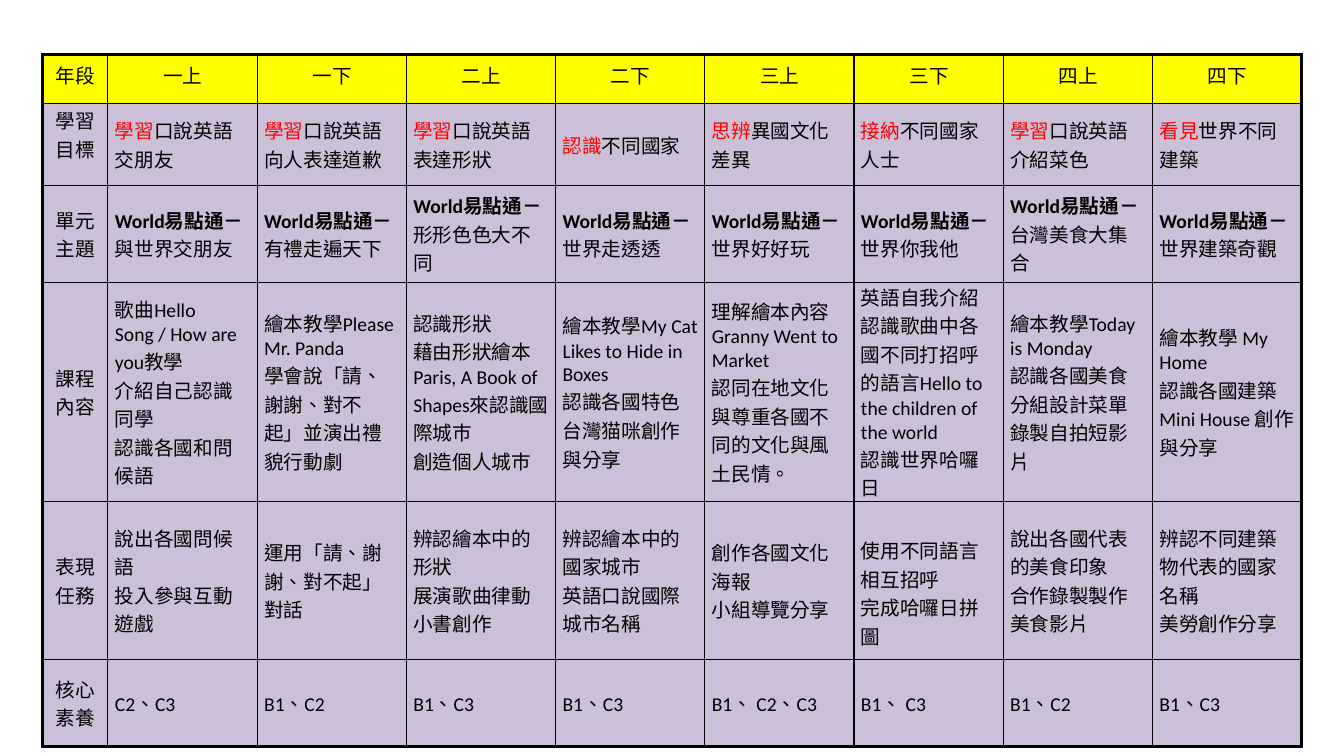
"""Build a one-slide curriculum table for an English programme."""
from dataclasses import dataclass

from lxml import etree
from pptx import Presentation
from pptx.dml.color import RGBColor
from pptx.enum.lang import MSO_LANGUAGE_ID
from pptx.enum.text import MSO_ANCHOR, PP_ALIGN
from pptx.oxml.ns import qn
from pptx.slide import Slide
from pptx.table import _Cell
from pptx.util import Inches, Pt

MIDDLE = MSO_ANCHOR.MIDDLE
CENTER = PP_ALIGN.CENTER
LEFT = PP_ALIGN.LEFT
CHINESE = MSO_LANGUAGE_ID.TRADITIONAL_CHINESE
COLORS = {"header": "FFFF00", "body": "CCC0D9", "text": "000000", "verb": "FF0000"}
TEXT_SIZE = Pt(14)
LEFT_MARGIN = Inches(0.07)
RIGHT_MARGIN = Inches(0.06)
OUTER_LINE = Pt(2.25)
INNER_LINE = Pt(1)
LABEL_WIDTH = 0.65
TERM_WIDTH = 1.48
VERB_LENGTH = 2
SERIES = "World易點通－"


@dataclass(frozen=True)
class Band:
    """One table row: its height, row label and the text for each term."""

    height: float
    label: str
    terms: tuple[str, ...]
    fill: str = "body"
    font: str = "Calibri"
    red_verb: bool = False
    bold_title: bool = False


BANDS = (
    Band(0.49, "年段", ("一上", "一下", "二上", "二下", "三上", "三下", "四上", "四下"), fill="header"),
    Band(0.81, "學習\n目標", (
        "學習口說英語交朋友",
        "學習口說英語向人表達道歉",
        "學習口說英語表達形狀",
        "認識不同國家",
        "思辨異國文化差異",
        "接納不同國家人士",
        "學習口說英語介紹菜色",
        "看見世界不同建築",
    ), font="Arial", red_verb=True),
    Band(0.96, "單元\n主題", tuple(f"{SERIES}\n{topic}" for topic in (
        "與世界交朋友", "有禮走遍天下", "形形色色大不同", "世界走透透",
        "世界好好玩", "世界你我他", "台灣美食大集合", "世界建築奇觀",
    )), bold_title=True),
    Band(1.94, "課程內容", (
        "歌曲Hello Song / How are you教學\n介紹自己認識同學\n認識各國和問候語",
        "繪本教學Please Mr. Panda\n學會說「請、謝謝、對不起」並演出禮貌行動劇",
        "認識形狀\n藉由形狀繪本Paris, A Book of Shapes來認識國際城巿\n創造個人城巿",
        "繪本教學My Cat Likes to Hide in Boxes\n認識各國特色\n台灣猫咪創作與分享",
        "理解繪本內容Granny Went to Market\n認同在地文化與尊重各國不同的文化與風土民情。",
        "英語自我介紹\n認識歌曲中各國不同打招呼的語言Hello to the children of the world\n認識世界哈囉日",
        "繪本教學Today is Monday\n認識各國美食\n分組設計菜單\n錄製自拍短影片",
        "繪本教學 My Home\n認識各國建築\nMini House 創作與分享",
    )),
    Band(1.57, "表現任務", (
        "說出各國問候語\n投入參與互動遊戲",
        "運用「請、謝謝、對不起」對話",
        "辨認繪本中的形狀\n展演歌曲律動小書創作",
        "辨認繪本中的國家城市\n英語口說國際城市名稱",
        "創作各國文化海報\n小組導覽分享",
        "使用不同語言相互招呼\n完成哈囉日拼圖",
        "說出各國代表的美食印象\n合作錄製製作美食影片",
        "辨認不同建築物代表的國家名稱\n美勞創作分享",
    )),
    Band(0.86, "核心\n素養", (
        "C2、C3", "B1、C2", "B1、C3", "B1、C3", "B1、 C2、C3", "B1、 C3", "B1、C2", "B1、C3",
    )),
)


def color(name: str) -> RGBColor:
    """Return a named colour."""
    return RGBColor.from_string(COLORS[name])


def write_text(cell: _Cell, band: Band, text: str, is_label: bool) -> None:
    """Write the paragraphs of a cell and format their runs."""
    frame = cell.text_frame
    frame.text = text
    is_header = band.fill == "header"
    has_verb = band.red_verb and not is_label
    for number, para in enumerate(frame.paragraphs):
        para.alignment = CENTER if is_label or is_header else LEFT
        if is_header:
            para.line_spacing = TEXT_SIZE
        if has_verb:
            sentence = para.text
            para.text = sentence[:VERB_LENGTH]
            para.add_run().text = sentence[VERB_LENGTH:]
        for position, span in enumerate(para.runs):
            font = span.font
            font.size = TEXT_SIZE
            font.name = "Calibri" if is_label else band.font
            font.language_id = CHINESE
            font.bold = band.bold_title and not is_label and number == 0
            font.color.rgb = color("verb" if has_verb and position == 0 else "text")


def draw_borders(cell: _Cell, outer_sides: dict[str, bool]) -> None:
    """Draw the four borders, heavier on the outer sides of the table."""
    properties = cell._tc.get_or_add_tcPr()
    for index, (side, is_outer) in enumerate(outer_sides.items()):
        width = OUTER_LINE if is_outer else INNER_LINE
        line = etree.Element(qn(f"a:ln{side}"), w=str(int(width)))
        fill = etree.SubElement(line, qn("a:solidFill"))
        etree.SubElement(fill, qn("a:srgbClr"), val=COLORS["text"])
        properties.insert(index, line)


def build_table(page: Slide) -> None:
    """Add the curriculum table to the page."""
    term_count = len(BANDS[0].terms)
    widths = [LABEL_WIDTH] + [TERM_WIDTH] * term_count
    frame = page.shapes.add_table(
        len(BANDS), len(widths), Inches(0.42), Inches(0.54),
        Inches(sum(widths)), Inches(sum(band.height for band in BANDS)),
    )
    table = frame.table
    table.first_row = False
    table.horz_banding = False
    for column, width in zip(table.columns, widths):
        column.width = Inches(width)
    for row, band in enumerate(BANDS):
        table.rows[row].height = Inches(band.height)
        for column, text in enumerate((band.label, *band.terms)):
            cell = table.cell(row, column)
            cell.vertical_anchor = MIDDLE
            cell.margin_left = LEFT_MARGIN
            cell.margin_right = RIGHT_MARGIN
            cell.margin_top = cell.margin_bottom = 0
            cell.fill.solid()
            cell.fill.fore_color.rgb = color(band.fill)
            write_text(cell, band, text, is_label=column == 0)
            draw_borders(cell, {
                "L": column == 0,
                "R": column == term_count,
                "T": row == 0,
                "B": row == len(BANDS) - 1,
            })
    table.cell(1, 0).margin_bottom = Inches(0.2)
    table.cell(4, 6).margin_top = Inches(0.25)


def main() -> None:
    """Create the deck and save it."""
    deck = Presentation()
    deck.slide_width = Inches(13.33)
    deck.slide_height = Inches(7.5)
    page = deck.slides.add_slide(deck.slide_layouts[6])
    build_table(page)
    deck.save("out.pptx")


if __name__ == "__main__":
    main()
